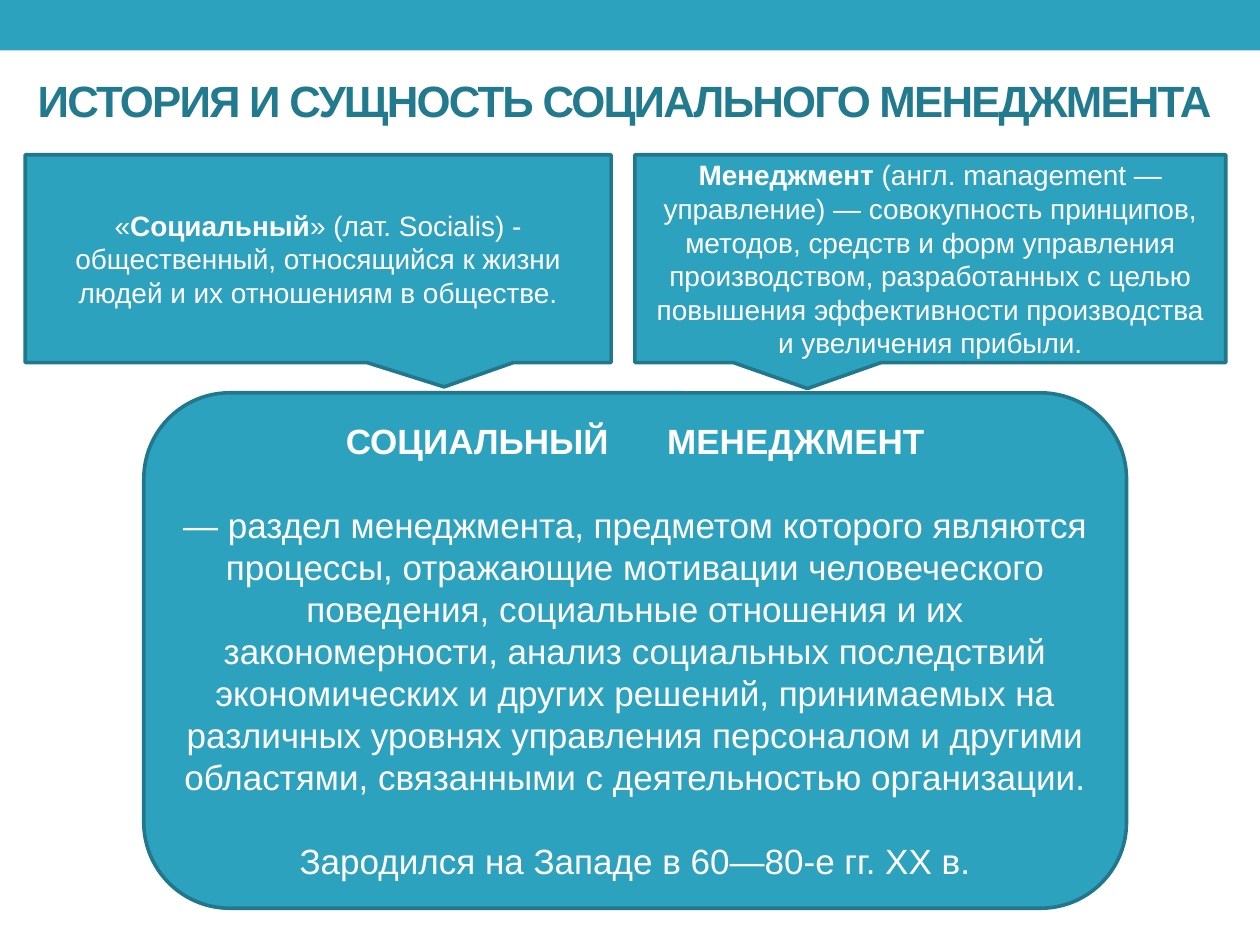
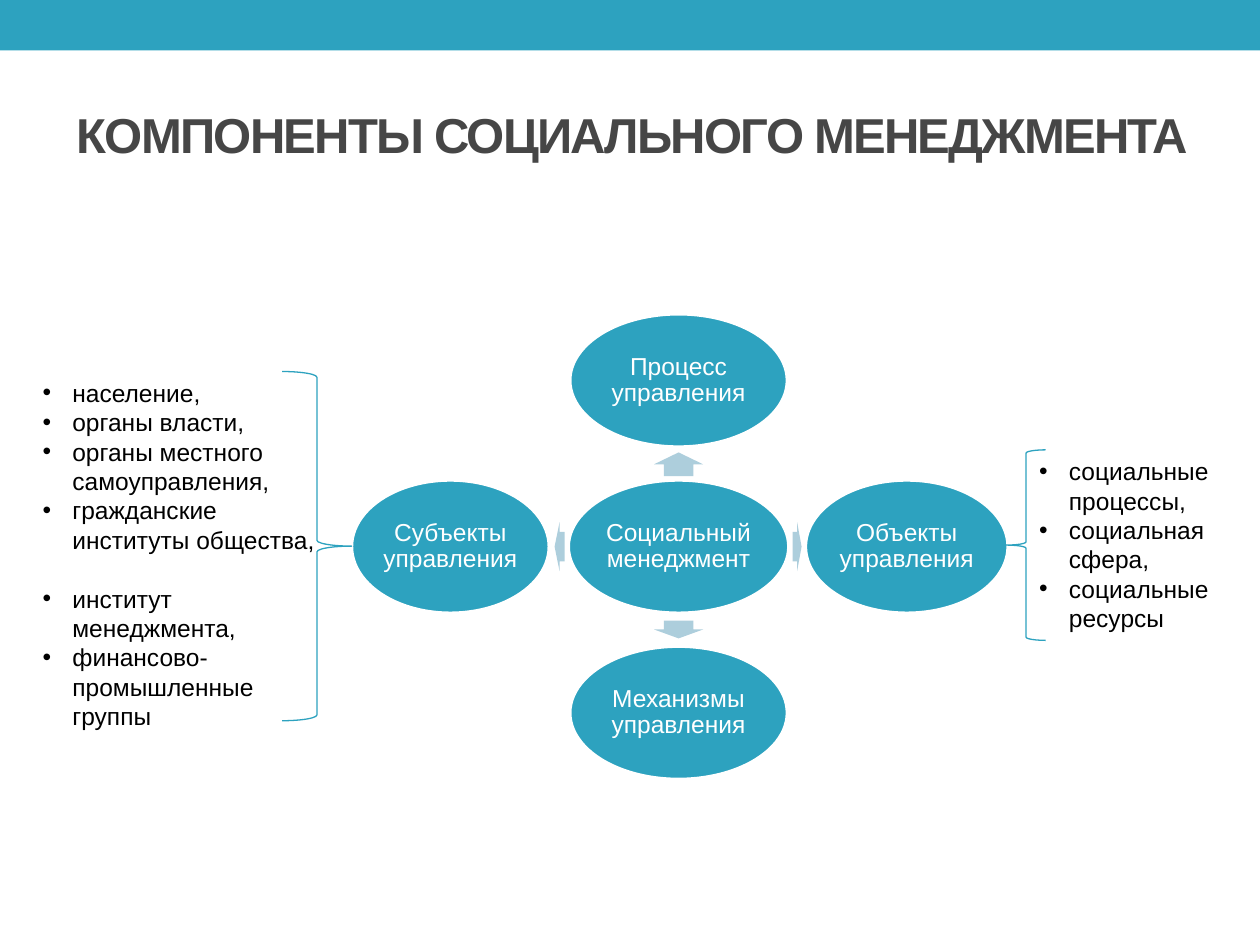
"""Builds two slides on the nature and components of social management."""
from lxml import etree
from pptx import Presentation
from pptx.dml.color import RGBColor
from pptx.enum.shapes import MSO_SHAPE
from pptx.enum.text import MSO_ANCHOR, PP_ALIGN
from pptx.oxml.ns import qn
from pptx.util import Cm, Pt

RECTANGLE = MSO_SHAPE.RECTANGLE
ROUNDED = MSO_SHAPE.ROUNDED_RECTANGLE
CALLOUT = MSO_SHAPE.RECTANGULAR_CALLOUT
OVAL = MSO_SHAPE.OVAL
ARROW = MSO_SHAPE.RIGHT_ARROW
LEFT_BRACE = MSO_SHAPE.LEFT_BRACE
RIGHT_BRACE = MSO_SHAPE.RIGHT_BRACE
MIDDLE = MSO_ANCHOR.MIDDLE
CENTER = PP_ALIGN.CENTER

TEAL = RGBColor(0x2D, 0xA2, 0xBF)
DARK_TEAL = RGBColor(0x21, 0x78, 0x8D)
TITLE_TEAL = RGBColor(0x22, 0x7A, 0x8F)
TITLE_GRAY = RGBColor(0x46, 0x46, 0x46)
PALE_BLUE = RGBColor(0xAD, 0xCE, 0xDC)
WHITE = RGBColor(0xFF, 0xFF, 0xFF)
BLACK = RGBColor(0, 0, 0)
FONT = "Arial"


def add_shape(slide, kind, box, fill=None, line=None, line_width=2.08):
    shape = slide.shapes.add_shape(kind, *[Cm(value) for value in box])
    shape.shadow.inherit = False
    if fill is None:
        shape.fill.background()
    else:
        shape.fill.solid()
        shape.fill.fore_color.rgb = fill
    if line is None:
        shape.line.fill.background()
    else:
        shape.line.color.rgb = line
        shape.line.width = Pt(line_width)
    shape.text_frame.vertical_anchor = MIDDLE
    return shape


def add_runs(paragraph, runs, size, color):
    for text, bold in runs:
        run = paragraph.add_run()
        run.text = text
        run.font.name = FONT
        run.font.size = Pt(size)
        run.font.bold = bold
        run.font.color.rgb = color


presentation = Presentation()
presentation.slide_width = Cm(25.4)
presentation.slide_height = Cm(19.05)
blank_layout = presentation.slide_layouts[6]

titles = [
    ("ИСТОРИЯ И СУЩНОСТЬ СОЦИАЛЬНОГО МЕНЕДЖМЕНТА",
     (0.51, 1.12, 24.61, 1.8), 25, TITLE_TEAL),
    ("КОМПОНЕНТЫ СОЦИАЛЬНОГО МЕНЕДЖМЕНТА",
     (1.3, 1.88, 23.6, 1.65), 28, TITLE_GRAY),
]
for title, box, size, color in titles:
    slide = presentation.slides.add_slide(blank_layout)
    add_shape(slide, RECTANGLE, (0, 0, 25.4, 1.02), TEAL)
    text_frame = slide.shapes.add_textbox(*[Cm(value) for value in box]).text_frame
    text_frame.word_wrap = True
    text_frame.vertical_anchor = MIDDLE
    paragraph = text_frame.paragraphs[0]
    add_runs(paragraph, [(title, True)], size, color)
    paragraph.runs[0].font._element.set("spc", "-100")

history_slide, components_slide = presentation.slides

definition = add_shape(history_slide, ROUNDED, (2.9, 7.92, 19.81, 10.39), TEAL, DARK_TEAL)
definition_paragraphs = [
    [("СОЦИАЛЬНЫЙ", True), (" ", True), ("МЕНЕДЖМЕНТ", True)],
    [("— раздел менеджмента, предметом которого являются процессы, отражающие "
      "мотивации человеческого поведения, социальные отношения и их закономерности, "
      "анализ социальных последствий экономических и других решений, принимаемых на "
      "различных уровнях управления персоналом и другими областями, связанными "
      "с деятельностью организации.", False)],
    [("Зародился на Западе в 60—80-е гг. XX в.", False)],
]
text_frame = definition.text_frame
for index, runs in enumerate(definition_paragraphs):
    paragraph = text_frame.add_paragraph() if index else text_frame.paragraphs[0]
    paragraph.alignment = CENTER
    if index:
        paragraph.space_before = Pt(24)
    add_runs(paragraph, runs, 20, WHITE)
heading_gap = text_frame.paragraphs[0].runs[1]
heading_gap.font._element.set("spc", "2780")

callouts = [
    (12.8, 11.91, (-0.208, 0.625),
     [("Менеджмент", True),
      (" (англ. management — управление) — совокупность принципов, методов, средств "
       "и форм управления производством, разработанных с целью повышения "
       "эффективности производства и увеличения прибыли.", False)]),
    (0.51, 11.81, (0.215, 0.617),
     [("«", False), ("Социальный", True),
      ("» (лат. Socialis) - общественный, относящийся к жизни людей "
       "и их отношениям в обществе.", False)]),
]
for left, width, tip, runs in callouts:
    callout = add_shape(history_slide, CALLOUT, (left, 3.12, width, 4.19), TEAL, DARK_TEAL)
    callout.adjustments[0], callout.adjustments[1] = tip
    paragraph = callout.text_frame.paragraphs[0]
    paragraph.alignment = CENTER
    add_runs(paragraph, runs, 16, WHITE)

CENTER_X, CENTER_Y, ROW_STEP, OVAL_HEIGHT = 13.68, 11.02, 3.35, 2.69
components = [
    ("Социальный менеджмент", CENTER_X, CENTER_Y, 4.45),
    ("Процесс управления", CENTER_X, CENTER_Y - ROW_STEP, 4.39),
    ("Объекты управления", 18.28, CENTER_Y, 4.09),
    ("Механизмы управления", CENTER_X, CENTER_Y + ROW_STEP, 4.39),
    ("Субъекты управления", 9.08, CENTER_Y, 3.99),
]
for label, x, y, width in components:
    box = (x - width / 2, y - OVAL_HEIGHT / 2, width, OVAL_HEIGHT)
    oval = add_shape(components_slide, OVAL, box, TEAL, WHITE)
    text_frame = oval.text_frame
    text_frame.margin_left = text_frame.margin_right = Cm(0.05)
    text_frame.margin_top = text_frame.margin_bottom = Cm(0.05)
    paragraph = text_frame.paragraphs[0]
    paragraph.alignment = CENTER
    paragraph.line_spacing = 0.9
    add_runs(paragraph, [(label, False)], 14, WHITE)

ARROW_THICKNESS = 0.99
arrows = [
    (CENTER_X, 9.36, 0.48, 270),
    (16.07, CENTER_Y, 0.18, 0),
    (CENTER_X, 12.69, 0.36, 90),
    (11.28, CENTER_Y, 0.2, 180),
]
for x, y, length, rotation in arrows:
    box = (x - length / 2, y - ARROW_THICKNESS / 2, length, ARROW_THICKNESS)
    arrow = add_shape(components_slide, ARROW, box, PALE_BLUE)
    arrow.adjustments[0] = 0.6
    arrow.rotation = rotation

lists = [
    (RIGHT_BRACE, (5.69, 7.49, 1.4, 7.04), (0.61, 7.49, 6.1, 6.83),
     ["население,", "органы власти,", "органы местного самоуправления,",
      "гражданские институты общества,", "институт менеджмента,",
      "финансово-промышленные группы"]),
    (LEFT_BRACE, (20.29, 9.07, 0.79, 3.84), (20.7, 9.07, 4.6, 3.84),
     ["социальные процессы,", "социальная сфера,", "социальные ресурсы"]),
]
for brace, brace_box, list_box, items in lists:
    add_shape(components_slide, brace, brace_box, line=TEAL, line_width=0.75)
    textbox = components_slide.shapes.add_textbox(*[Cm(value) for value in list_box])
    text_frame = textbox.text_frame
    text_frame.word_wrap = True
    for index, item in enumerate(items):
        paragraph = text_frame.add_paragraph() if index else text_frame.paragraphs[0]
        if item == "институт менеджмента,":
            paragraph.space_before = Pt(16.8)
        properties = paragraph._p.get_or_add_pPr()
        properties.set("marL", str(Cm(0.6)))
        properties.set("indent", str(-Cm(0.6)))
        etree.SubElement(properties, qn("a:buFont")).set("typeface", FONT)
        etree.SubElement(properties, qn("a:buChar")).set("char", "•")
        add_runs(paragraph, [(item, False)], 14, BLACK)

presentation.save("out.pptx")
